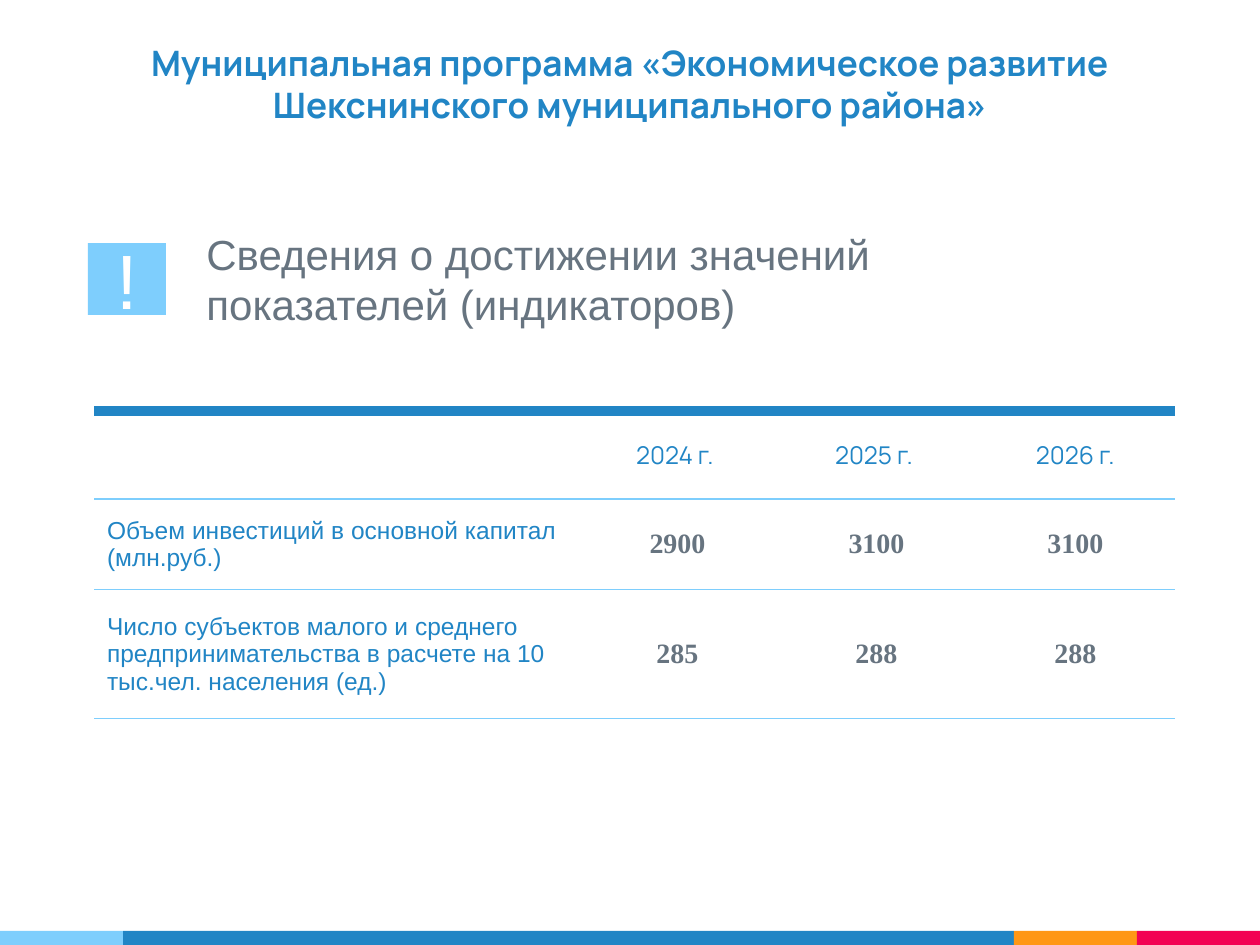
import lxml.etree
import pptx
import pptx.dml.color
import pptx.enum.shapes
import pptx.enum.text
import pptx.oxml.ns
import pptx.util

EMU_PER_PX = 914400 / 126
COLORS = {
    "blue": "2185C5", "sky": "7ECEFD", "orange": "FF9715",
    "red": "F20253", "gray": "677480", "white": "FFFFFF",
}
ALIGN = pptx.enum.text.PP_ALIGN
ANCHOR = pptx.enum.text.MSO_ANCHOR

TITLE_FONT = {"name": "Manrope", "size": pptx.util.Pt(20), "bold": True}
HEADING_FONT = {"name": "Arial", "size": pptx.util.Pt(24), "bold": False}
MARK_FONT = {"name": "Arial", "size": pptx.util.Pt(44), "bold": False}
YEAR_FONT = {"name": "Manrope", "size": pptx.util.Pt(14), "bold": False}
LABEL_FONT = {"name": "Arial", "size": pptx.util.Pt(14), "bold": False}
VALUE_FONT = {"name": "Times New Roman", "size": pptx.util.Pt(16), "bold": True}

ROWS = [
    ["", "2024 г. ", "2025 г. ", "2026 г."],
    ["Объем инвестиций в основной капитал (млн.руб.)", "2900", "3100", "3100"],
    ["Число субъектов малого и среднего предпринимательства в расчете на 10 "
     "тыс.чел. населения (ед.)", "285", "288", "288"],
]
COLUMN_WIDTHS = [484, 199, 199, 199]
ROW_HEIGHTS = [88, 91, 129]
FOOTER_BANDS = [("sky", 123), ("blue", 891), ("orange", 123), ("red", 123)]


def px(length):
    return pptx.util.Emu(round(length * EMU_PER_PX))


def rgb(color):
    return pptx.dml.color.RGBColor.from_string(COLORS[color])


def set_margins(frame, horizontal, vertical):
    frame.margin_left = frame.margin_right = px(horizontal)
    frame.margin_top = frame.margin_bottom = px(vertical)


def write_text(frame, text, font, color, align):
    frame.word_wrap = True
    frame.text = text
    for paragraph in frame.paragraphs:
        paragraph.alignment = align
        for run in paragraph.runs:
            for name, value in font.items():
                setattr(run.font, name, value)
            run.font.color.rgb = rgb(color)


def add_rectangle(slide, left, top, width, height, color):
    shape = slide.shapes.add_shape(
        pptx.enum.shapes.MSO_SHAPE.RECTANGLE, px(left), px(top), px(width), px(height))
    shape.shadow.inherit = False
    shape.fill.solid()
    shape.fill.fore_color.rgb = rgb(color)
    shape.line.fill.background()
    return shape


def add_footer(slide):
    left = 0
    for color, width in FOOTER_BANDS:
        add_rectangle(slide, left, 931, width, 14, color)
        left += width


def format_title(slide):
    title = slide.shapes.title
    title.left, title.top, title.width, title.height = px(0), px(20), px(1260), px(119)
    frame = title.text_frame
    set_margins(frame, 13, 13)
    frame.vertical_anchor = ANCHOR.BOTTOM
    text = "Муниципальная программа «Экономическое развитие\vШекснинского муниципального района»"
    write_text(frame, text, TITLE_FONT, "blue", ALIGN.CENTER)


def set_borders(cell, top, bottom):
    """Draw (color, points) lines above and below the cell, and none at its sides."""
    properties = cell._tc.get_or_add_tcPr()
    qn = pptx.oxml.ns.qn
    edges = [("a:lnL", None), ("a:lnR", None), ("a:lnT", top), ("a:lnB", bottom)]
    for index, (tag, border) in enumerate(edges):
        line = lxml.etree.Element(qn(tag))
        if border is None:
            lxml.etree.SubElement(line, qn("a:noFill"))
        else:
            color, points = border
            line.set("w", str(pptx.util.Pt(points)))
            fill = lxml.etree.SubElement(line, qn("a:solidFill"))
            lxml.etree.SubElement(fill, qn("a:srgbClr"), val=COLORS[color])
        properties.insert(index, line)


def add_indicator_table(slide):
    table = slide.shapes.add_table(
        len(ROWS), len(COLUMN_WIDTHS), px(94), px(411),
        px(sum(COLUMN_WIDTHS)), px(sum(ROW_HEIGHTS))).table
    table.first_row = table.horz_banding = False
    for column, width in zip(table.columns, COLUMN_WIDTHS):
        column.width = px(width)
    for row_index, (row, height) in enumerate(zip(table.rows, ROW_HEIGHTS)):
        row.height = px(height)
        for column_index, text in enumerate(ROWS[row_index]):
            cell = table.cell(row_index, column_index)
            cell.fill.background()
            cell.vertical_anchor = ANCHOR.MIDDLE
            thin = ("sky", 0.75)
            set_borders(cell, ("blue", 6) if row_index == 0 else thin, thin)
            set_margins(cell, 13, 9 if row_index == 0 else 6)
            if row_index == 0:
                font, color, align = YEAR_FONT, "blue", ALIGN.CENTER
            elif column_index == 0:
                font, color, align = LABEL_FONT, "blue", ALIGN.LEFT
            else:
                font, color, align = VALUE_FONT, "gray", ALIGN.CENTER
            write_text(cell.text_frame, text, font, color, align)


def add_heading(slide):
    box = slide.shapes.add_textbox(px(194), px(222), px(761), px(115))
    write_text(box.text_frame, "Сведения о достижении значений показателей (индикаторов)",
               HEADING_FONT, "gray", ALIGN.LEFT)


def add_attention_mark(slide):
    mark = add_rectangle(slide, 88, 243, 78, 72, "sky")
    set_margins(mark.text_frame, 13, 13)
    mark.text_frame.vertical_anchor = ANCHOR.MIDDLE
    write_text(mark.text_frame, "!", MARK_FONT, "white", ALIGN.CENTER)


def main():
    presentation = pptx.Presentation()
    presentation.slide_width, presentation.slide_height = px(1260), px(945)
    slide = presentation.slides.add_slide(presentation.slide_layouts[5])
    add_footer(slide)
    format_title(slide)
    add_indicator_table(slide)
    add_heading(slide)
    add_attention_mark(slide)
    presentation.save("out.pptx")


if __name__ == "__main__":
    main()
